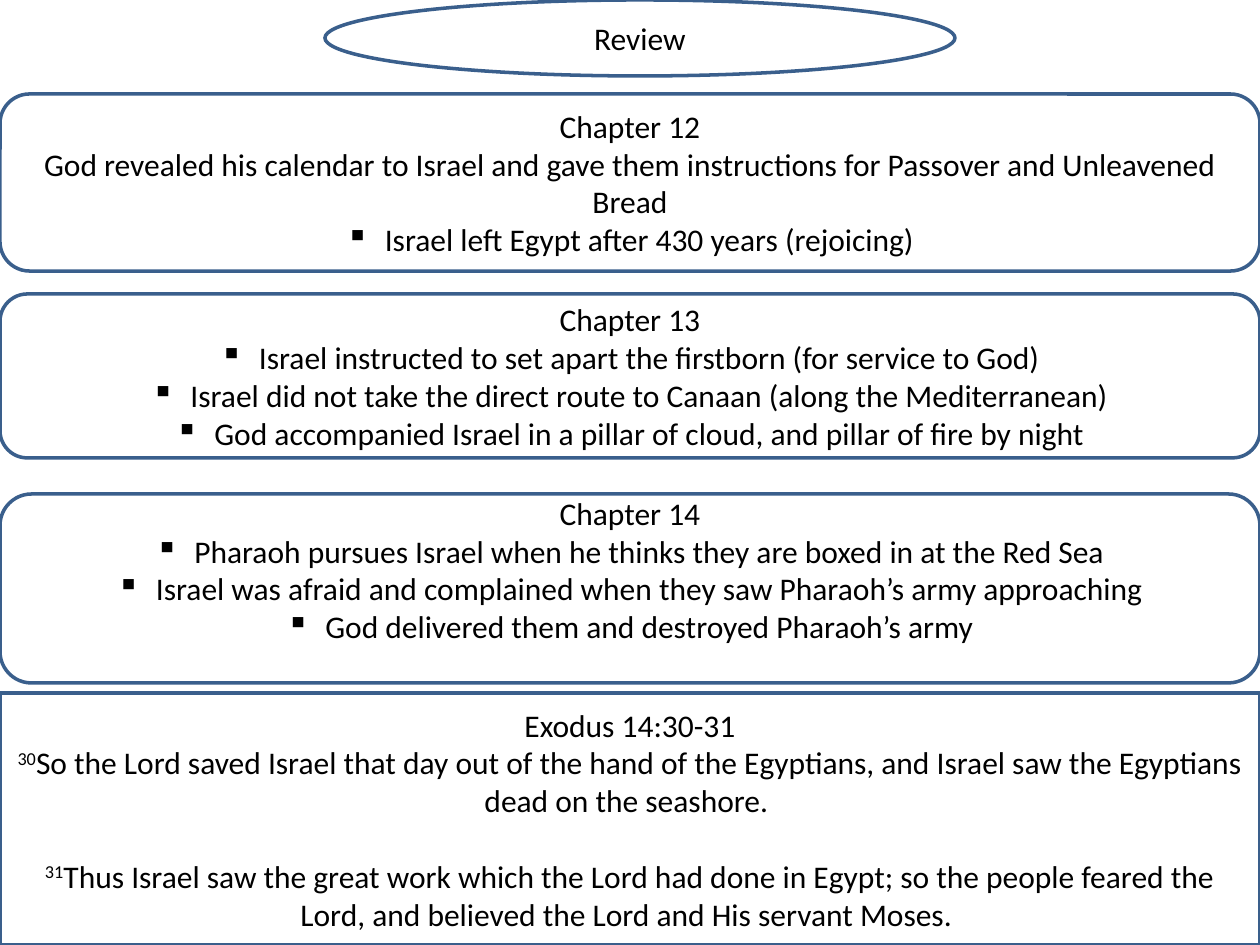
"""Build the Exodus review slide."""
from lxml import etree
from pptx import Presentation
from pptx import util as u
from pptx.dml.color import RGBColor
from pptx.enum import shapes, text
from pptx.oxml.ns import qn

PX = 7258
WIDTH, HEIGHT = 1260, 945
INSET, LINE, HANG = 6, 38, 39
BLACK = RGBColor(0x00, 0x00, 0x00)
WHITE = RGBColor(0xFF, 0xFF, 0xFF)
BLUE = RGBColor(0x3A, 0x5F, 0x8C)
FONT = {"name": "Calibri", "size": u.Pt(18)}
KINDS = shapes.MSO_SHAPE

PANELS = [
    {"kind": KINDS.OVAL, "at": (325, 0, 630, 76), "heading": "Review"},
    {"kind": KINDS.ROUNDED_RECTANGLE, "at": (0, 94, WIDTH, 177),
     "heading": "Chapter 12",
     "summary": "God revealed his calendar to Israel and gave them instructions "
                "for Passover and Unleavened Bread",
     "points": ["Israel left Egypt after 430 years (rejoicing)"]},
    {"kind": KINDS.ROUNDED_RECTANGLE, "at": (0, 294, WIDTH, 164),
     "heading": "Chapter 13",
     "points": [
         "Israel instructed to set apart the firstborn (for service to God)",
         "Israel did not take the direct route to Canaan (along the Mediterranean)",
         "God accompanied Israel in a pillar of cloud, and pillar of fire by night"]},
    {"kind": KINDS.ROUNDED_RECTANGLE, "at": (0, 494, WIDTH, 189),
     "heading": "Chapter 14", "bottom": INSET + LINE,
     "points": [
         "Pharaoh pursues Israel when he thinks they are boxed in at the Red Sea",
         "Israel was afraid and complained when they saw Pharaoh’s army approaching",
         "God delivered them and destroyed Pharaoh’s army"]},
    {"kind": KINDS.RECTANGLE, "at": (0, 693, WIDTH, 252),
     "heading": "Exodus 14:30-31",
     "verses": [
         ("30", "So the Lord saved Israel that day out of the hand of the "
                "Egyptians, and Israel saw the Egyptians dead on the seashore. "),
         ("31", "Thus Israel saw the great work which the Lord had done in Egypt; "
                "so the people feared the Lord, and believed the Lord and His "
                "servant Moses. ")]},
]


def add_span(para, words, raised=False):
    span = para.add_run()
    span.text = words
    for name, value in FONT.items():
        setattr(span.font, name, value)
    span.font.color.rgb = BLACK
    if raised:
        span.font._element.set("baseline", "30000")


def add_para(frame, words=""):
    para = frame.add_paragraph() if frame.paragraphs[0].runs else frame.paragraphs[0]
    para.alignment = text.PP_ALIGN.CENTER
    if words:
        add_span(para, words)
    return para


def add_bullet(para):
    properties = para._p.get_or_add_pPr()
    properties.set("marL", str(HANG * PX))
    properties.set("indent", str(-HANG * PX))
    etree.SubElement(properties, qn("a:buChar")).set("char", "▪")


def add_panel(page, panel):
    box = page.shapes.add_shape(panel["kind"], *(n * PX for n in panel["at"]))
    box.shadow.inherit = False
    box.fill.solid()
    box.fill.fore_color.rgb = WHITE
    box.line.color.rgb = BLUE
    box.line.width = u.Pt(2)
    frame = box.text_frame
    layout = {"word_wrap": True, "vertical_anchor": text.MSO_ANCHOR.MIDDLE,
              "margin_top": INSET * PX,
              "margin_bottom": panel.get("bottom", INSET) * PX}
    for name, value in layout.items():
        setattr(frame, name, value)
    add_para(frame, panel["heading"])
    if "summary" in panel:
        add_para(frame, panel["summary"])
    for point in panel.get("points", []):
        add_bullet(add_para(frame, point))
    for index, (number, words) in enumerate(panel.get("verses", [])):
        para = add_para(frame)
        para.space_before = index * LINE * PX
        add_span(para, number, raised=True)
        add_span(para, words)


def main():
    deck = Presentation()
    deck.slide_width, deck.slide_height = WIDTH * PX, HEIGHT * PX
    page = deck.slides.add_slide(deck.slide_layouts[6])
    for panel in PANELS:
        add_panel(page, panel)
    deck.save("out.pptx")


if __name__ == "__main__":
    main()
